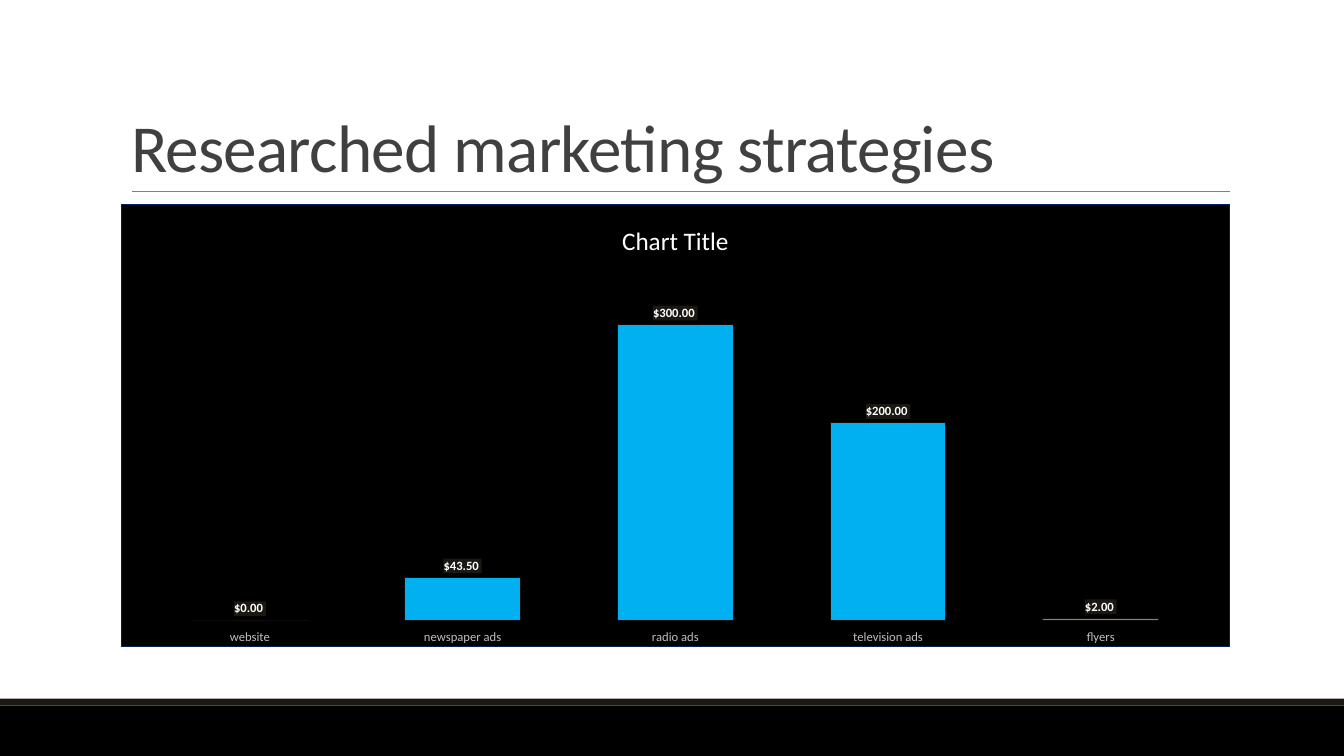
from lxml import etree
from pptx import Presentation
from pptx.chart.data import CategoryChartData
from pptx.dml.color import RGBColor
from pptx.enum.chart import XL_CHART_TYPE as CT, XL_LABEL_POSITION as LP, XL_TICK_LABEL_POSITION as TLP, XL_TICK_MARK as TM
from pptx.enum.shapes import MSO_CONNECTOR, MSO_SHAPE
from pptx.enum.text import MSO_ANCHOR, PP_ALIGN
from pptx.oxml import parse_xml
from pptx.oxml.ns import nsdecls, qn
from pptx.util import Pt

TITLE = "Researched marketing strategies"
CHART_TITLE = "Chart Title"
COSTS = {
    "website": 0,
    "newspaper ads": 43.5,
    "radio ads": 300,
    "television ads": 200,
    "flyers": 2,
}
MONEY = '"$"#,##0.00_);[Red]\\("$"#,##0.00\\)'
PLOT = {"x": 0.02, "y": 0.16, "w": 0.96, "h": 0.78}
FONT = "Calibri"

BLACK = RGBColor(0x00, 0x00, 0x00)
WHITE = RGBColor(0xFF, 0xFF, 0xFF)
DARK = RGBColor(0x1B, 0x18, 0x11)
RULE = RGBColor(0x80, 0x80, 0x80)
TITLE_GRAY = RGBColor(0x40, 0x40, 0x40)
AXIS_GRAY = RGBColor(0xBF, 0xBF, 0xBF)
NAVY = RGBColor(0x00, 0x20, 0x60)
BAR_BLUE = RGBColor(0x00, 0xB0, 0xF0)
BAR_EDGE = RGBColor(0x0E, 0x0C, 0x08)

W, H = 960, 540
LEFT, WIDTH = 86.4, 792
FOOTER_TOP, STRIP_H = 504, 5
RULE_Y = 136.8


def style(font, size, color, bold=False):
    font.name = FONT
    font.size = Pt(size)
    font.bold = bold
    font.color.rgb = color


def add_band(s, top, height, color):
    band = s.shapes.add_shape(MSO_SHAPE.RECTANGLE, 0, Pt(top), Pt(W), Pt(height))
    band.shadow.inherit = False
    band.fill.solid()
    band.fill.fore_color.rgb = color
    band.line.fill.background()


def fill_xml(color, border=""):
    return parse_xml(
        f'<c:spPr {nsdecls("c", "a")}><a:solidFill><a:srgbClr val="{color}"/>'
        f"</a:solidFill>{border}</c:spPr>")


def add_title(s):
    title = s.shapes.title
    title.left, title.top, title.width, title.height = Pt(LEFT), Pt(22.3), Pt(WIDTH), Pt(114.5)
    tf = title.text_frame
    tf.text = TITLE
    tf.word_wrap = True
    tf.vertical_anchor = MSO_ANCHOR.BOTTOM
    p = tf.paragraphs[0]
    p.alignment = PP_ALIGN.LEFT
    p.line_spacing = 0.85
    r = p.runs[0]
    style(r.font, 48, TITLE_GRAY)
    r.font._element.set("spc", "-50")


def add_cost_chart(s):
    data = CategoryChartData(number_format=MONEY)
    data.categories = list(COSTS)
    data.add_series("Series 1", list(COSTS.values()))
    chart = s.shapes.add_chart(
        CT.COLUMN_CLUSTERED, Pt(LEFT), Pt(145.6), Pt(WIDTH), Pt(316.6), data).chart
    style(chart.font, 10, BLACK)
    chart.has_legend = False
    chart.has_title = True
    tf = chart.chart_title.text_frame
    tf.text = CHART_TITLE
    style(tf.paragraphs[0].runs[0].font, 18, WHITE)
    chart.chart_title.include_in_layout = False

    cat = chart.category_axis
    cat.major_tick_mark = cat.minor_tick_mark = TM.NONE
    cat.tick_label_position = TLP.LOW
    cat.format.line.fill.background()
    style(cat.tick_labels.font, 9, AXIS_GRAY)
    val = chart.value_axis
    val.minimum_scale, val.maximum_scale = 0, 350
    val.has_major_gridlines = False
    val.tick_labels.number_format = MONEY
    val.tick_labels.number_format_is_linked = False
    val.visible = False

    plot = chart.plots[0]
    plot.gap_width = 84
    plot.vary_by_categories = False
    bars = plot.series[0]
    bars.format.fill.solid()
    bars.format.fill.fore_color.rgb = BAR_BLUE
    bars.format.line.color.rgb = BAR_EDGE
    bars.format.line.width = Pt(0.75)
    labels = bars.data_labels
    labels.show_value = True
    labels.position = LP.OUTSIDE_END
    labels.number_format = MONEY
    labels.number_format_is_linked = False
    style(labels.font, 9, WHITE, True)
    labels._element.find(qn("c:numFmt")).addnext(fill_xml(DARK))

    root = chart._chartSpace
    border = f'<a:ln w="{Pt(0.5)}"><a:solidFill><a:srgbClr val="{NAVY}"/></a:solidFill></a:ln>'
    root.find(qn("c:chart")).addnext(fill_xml(BLACK, border))
    area = root.find(".//" + qn("c:plotArea"))
    layout = area.find(qn("c:layout"))
    if layout is None:
        layout = etree.Element(qn("c:layout"))
        area.insert(0, layout)
    manual = etree.SubElement(layout, qn("c:manualLayout"))
    settings = {"layoutTarget": "inner", "xMode": "edge", "yMode": "edge", **PLOT}
    for name, value in settings.items():
        etree.SubElement(manual, qn(f"c:{name}")).set("val", str(value))


def main():
    prs = Presentation()
    prs.slide_width, prs.slide_height = Pt(W), Pt(H)
    s = prs.slides.add_slide(prs.slide_layouts[5])
    add_band(s, FOOTER_TOP, H - FOOTER_TOP, BLACK)
    add_band(s, FOOTER_TOP - STRIP_H, STRIP_H, DARK)
    rule = s.shapes.add_connector(
        MSO_CONNECTOR.STRAIGHT, Pt(94.3), Pt(RULE_Y), Pt(LEFT + WIDTH), Pt(RULE_Y))
    rule.line.color.rgb = RULE
    rule.line.width = Pt(0.5)
    etree.SubElement(rule._element.spPr, qn("a:effectLst"))
    add_title(s)
    add_cost_chart(s)
    prs.save("out.pptx")


if __name__ == "__main__":
    main()
